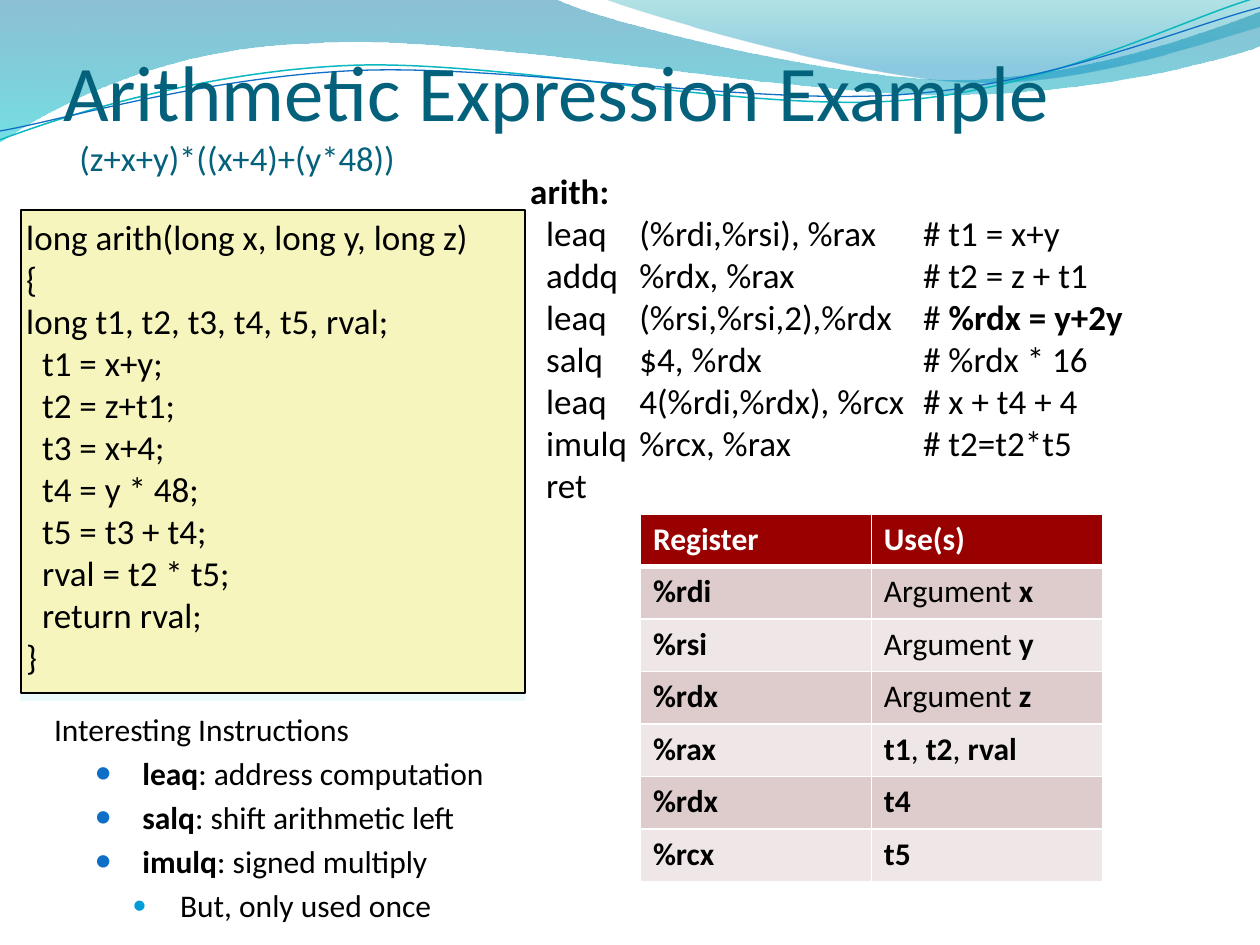
from lxml import etree
from pptx import Presentation
from pptx.dml.color import RGBColor
from pptx.enum.shapes import MSO_SHAPE
from pptx.enum.text import MSO_ANCHOR, MSO_AUTO_SIZE, PP_ALIGN
from pptx.oxml.ns import qn
from pptx.util import Cm, Pt

RECTANGLE = MSO_SHAPE.RECTANGLE
TOP, BOTTOM = MSO_ANCHOR.TOP, MSO_ANCHOR.BOTTOM
LEFT = PP_ALIGN.LEFT
NO_AUTOFIT = MSO_AUTO_SIZE.NONE
FONT = "Calibri"
INCH = 2.54

TITLE = "Arithmetic Expression Example"
EXPRESSION = "(z+x+y)*((x+4)+(y*48))"

# In all texts below, | switches bold on and off.
CODE = [  # (indent level, line)
    (0, "long arith(long x, long y, long z)"),
    (0, "{"),
    (0, "long t1, t2, t3, t4, t5, rval;"),
    (1, "t1 = x+y;"),
    (1, "t2 = z+t1;"),
    (1, "t3 = x+4;"),
    (1, "t4 = y * 48;"),
    (1, "t5 = t3 + t4;"),
    (1, "rval = t2 * t5;"),
    (1, "return rval;"),
    (0, "}"),
]
ASSEMBLY = [  # label, or blank label followed by instruction, operands, comment
    ("|arith:|",),
    ("", "leaq", "(%rdi,%rsi), %rax", "# t1 = x+y"),
    ("", "addq", "%rdx, %rax", "# t2 = z + t1"),
    ("", "leaq", "(%rsi,%rsi,2),%rdx", "# |%rdx = y+2y|"),
    ("", "salq", "$4, %rdx", "# %rdx * 16"),
    ("", "leaq", "4(%rdi,%rdx), %rcx", "# x + t4 + 4"),
    ("", "imulq", "%rcx, %rax", "# t2=t2*t5"),
    ("", "ret"),
]
ASSEMBLY_TABS = (0.32, 2.2, 7.92)
REGISTERS = [
    ("|Register|", "|Use(s)|"),
    ("|%rdi|", "Argument |x|"),
    ("|%rsi|", "Argument |y|"),
    ("|%rdx|", "Argument |z|"),
    ("|%rax|", "|t1|, |t2|, |rval|"),
    ("|%rdx|", "|t4|"),
    ("|%rcx|", "|t5|"),
]
NOTES = [  # (level, text)
    (0, "Interesting Instructions"),
    (1, "|leaq|: address computation"),
    (1, "|salq|: shift arithmetic left"),
    (1, "|imulq|: signed multiply"),
    (2, "But, only used once"),
]
BULLETS = {1: (1.78, "0F6FC6", 85), 2: (2.54, "009DD9", 70)}  # indent, colour, size %

# Points in inches: two numbers are a corner, six are a Bézier segment.
BANDS = [  # (points, gradient stops as position, colour, opacity %)
    ([(0, 0), (4.4, -0.01), (4.76, 0.17, 6.64, 0.63, 7.58, 0.63),
      (8.53, 0.63, 9.58, 0.26, 10, 0.09), (10.01, 0.36),
      (9.83, 0.44, 8.7, 0.76, 7.46, 0.75), (6.22, 0.75, 3.82, 0.28, 2.57, 0.34),
      (1.29, 0.36, 0.46, 0.83, -0.01, 1.13), (0, 0)],
     [(0, "0074A1", 45), (1, "00C6CF", 55)]),
    ([(4.79, -0.01), (5.09, 0.11, 6.82, 0.62, 7.69, 0.65),
      (8.56, 0.69, 9.61, 0.32, 10, 0.21), (10, 0), (4.79, -0.01)],
     [(0, "00A1A9", 30), (0.8, "008BBF", 45)]),
]
WAVES = [  # (points, colour, width)
    ([(0, 1.11), (0.48, 0.93, 1.58, 0.57, 2.77, 0.52),
      (3.95, 0.47, 5.93, 0.89, 7.13, 0.8), (8.33, 0.71, 9.38, 0.15, 9.98, -0.02)],
     "0AB8BF", 0.85),
    ([(0, 1.04), (0.47, 0.96, 1.64, 0.61, 2.83, 0.56),
      (4.03, 0.51, 5.97, 0.84, 7.17, 0.75), (8.36, 0.67, 9.41, 0.21, 10, 0.06)],
     "0F6FC6", 0.75),
]


def color(value):
    return RGBColor.from_string(value)


def add_xml(parent, tag, **attributes):
    return etree.SubElement(parent, qn(tag), {k: str(v) for k, v in attributes.items()})


def add_outline(points, close):
    """Draw straight segments, then bend those that have control points."""
    start, *corners = [(Cm(p[-2] * INCH), Cm(p[-1] * INCH)) for p in points]
    builder = slide.shapes.build_freeform(*start)
    builder.add_line_segments(corners, close=close)
    shape = builder.convert_to_shape()
    shape.shadow.inherit = False
    segments = list(shape._element.spPr.iter(qn("a:lnTo")))
    for segment, point in zip(segments, points[1:]):
        if len(point) == 6:
            curve = etree.Element(qn("a:cubicBezTo"))
            for x, y in zip(point[::2], point[1::2]):
                add_xml(curve, "a:pt", x=Cm(x * INCH) - shape.left, y=Cm(y * INCH) - shape.top)
            segment.getparent().replace(segment, curve)
    return shape


def set_borders(cell, bottom, top):
    """Draw white borders; the two widths given are in points."""
    properties = cell._tc.get_or_add_tcPr()
    for index, (side, width) in enumerate(zip("LRTB", (1, 1, top, bottom))):
        border = etree.Element(qn("a:ln" + side), {"w": str(Pt(width))})
        add_xml(add_xml(border, "a:solidFill"), "a:srgbClr", val="FFFFFF")
        properties.insert(index, border)


def write(paragraph, text, size, font_color="000000"):
    """Fill a paragraph, switching bold at each bar."""
    for index, part in enumerate(text.split("|")):
        if part:
            run = paragraph.add_run()
            run.text = part
            run.font.bold = index % 2 == 1
    paragraph.alignment = LEFT
    font = paragraph.font
    font.name, font.size = FONT, Pt(size)
    font.color.rgb = color(font_color)


def prepare(frame, count, margin=None):
    """Set up a text frame and return its empty paragraphs."""
    frame.word_wrap = True
    frame.vertical_anchor = TOP
    if margin is not None:
        frame.margin_left = frame.margin_right = Cm(margin)
        frame.margin_top = frame.margin_bottom = Cm(margin)
    return [frame.paragraphs[0]] + [frame.add_paragraph() for _ in range(count - 1)]


presentation = Presentation()
presentation.slide_width, presentation.slide_height = Cm(25.4), Cm(19.05)
slide = presentation.slides.add_slide(presentation.slide_layouts[5])

for points, stops in BANDS:
    band = add_outline(points, True)
    band.line.fill.background()
    band.fill.gradient()
    band.fill.gradient_angle = 270
    for stop, (position, stop_color, _) in zip(band.fill.gradient_stops, stops):
        stop.position = position
        stop.color.rgb = color(stop_color)
    for element, stop in zip(band._element.spPr.iter(qn("a:srgbClr")), stops):
        add_xml(element, "a:alpha", val=stop[2] * 1000)
for points, line_color, width in WAVES:
    wave = add_outline(points, False)
    wave.fill.background()
    wave.line.color.rgb = color(line_color)
    wave.line.width = Pt(width)

code_box = slide.shapes.add_shape(RECTANGLE, Cm(0.42), Cm(4.23), Cm(10.16), Cm(9.74))
code_box.fill.solid()
code_box.fill.fore_color.rgb = color("F6F5BD")
code_box.line.color.rgb = color("000000")
code_box.line.width = Pt(1)
code_box.shadow.inherit = False
effects = code_box._element.spPr.find(qn("a:effectLst"))
shadow = add_xml(effects, "a:outerShdw", blurRad=0, dist=Pt(4), dir=90 * 60000)
add_xml(add_xml(shadow, "a:srgbClr", val="DBF5F9"), "a:alpha", val=50000)
for paragraph, (level, text) in zip(prepare(code_box.text_frame, len(CODE), 0.11), CODE):
    paragraph._p.get_or_add_pPr().set("marL", str(Cm(0.32 * level)))
    write(paragraph, text, 20)

assembly_box = slide.shapes.add_textbox(Cm(10.59), Cm(3.32), Cm(14.4), Cm(6.83))
for paragraph, parts in zip(prepare(assembly_box.text_frame, len(ASSEMBLY), 0.1), ASSEMBLY):
    tabs = add_xml(paragraph._p.get_or_add_pPr(), "a:tabLst")
    for position in ASSEMBLY_TABS:
        add_xml(tabs, "a:tab", pos=Cm(position), algn="l")
    write(paragraph, "\t".join(parts), 20)

table = slide.shapes.add_table(len(REGISTERS), 2, Cm(12.91), Cm(10.36),
                               Cm(9.31), Cm(7.41)).table
for row, texts in enumerate(REGISTERS):
    fill_color = "990000" if row == 0 else ("EFE7E7", "DECCCC")[row % 2]
    for column, text in enumerate(texts):
        cell = table.cell(row, column)
        cell.fill.solid()
        cell.fill.fore_color.rgb = color(fill_color)
        set_borders(cell, bottom=3 if row == 0 else 1, top=3 if row == 1 else 1)
        write(cell.text_frame.paragraphs[0], text, 18, "FFFFFF" if row == 0 else "000000")

notes_box = slide.shapes.add_textbox(Cm(0.84), Cm(14.18), Cm(12.24), Cm(4.65))
for paragraph, (level, text) in zip(prepare(notes_box.text_frame, len(NOTES)), NOTES):
    paragraph.level = level
    paragraph.space_before = Pt(3.6)
    if level in BULLETS:
        indent, bullet_color, bullet_size = BULLETS[level]
        properties = paragraph._p.get_or_add_pPr()
        properties.set("marL", str(Cm(indent)))
        properties.set("indent", str(Cm(-0.95)))
        add_xml(add_xml(properties, "a:buClr"), "a:srgbClr", val=bullet_color)
        add_xml(properties, "a:buSzPct", val=bullet_size * 1000)
        add_xml(properties, "a:buFont", typeface=FONT)
        add_xml(properties, "a:buChar", char="●")
    write(paragraph, text, 18)

title = slide.shapes.title
title.left, title.top, title.width, title.height = Cm(1.27), Cm(0.42), Cm(23.06), Cm(3.18)
paragraph = prepare(title.text_frame, 1, 0)[0]
title.text_frame.margin_top = Cm(0.13)
title.text_frame.vertical_anchor = BOTTOM
title.text_frame.auto_size = NO_AUTOFIT
properties = paragraph._p.get_or_add_pPr()
properties.set("marL", str(Cm(0.33)))
properties.set("indent", str(Cm(-0.33)))
write(paragraph, TITLE, 45, "04617B")
paragraph.add_line_break()
expression = paragraph.add_run()
expression.text = EXPRESSION
expression.font.size = Pt(19.8)
slide.shapes._spTree.append(title._element)  # bring the title in front of the waves

presentation.save("out.pptx")
